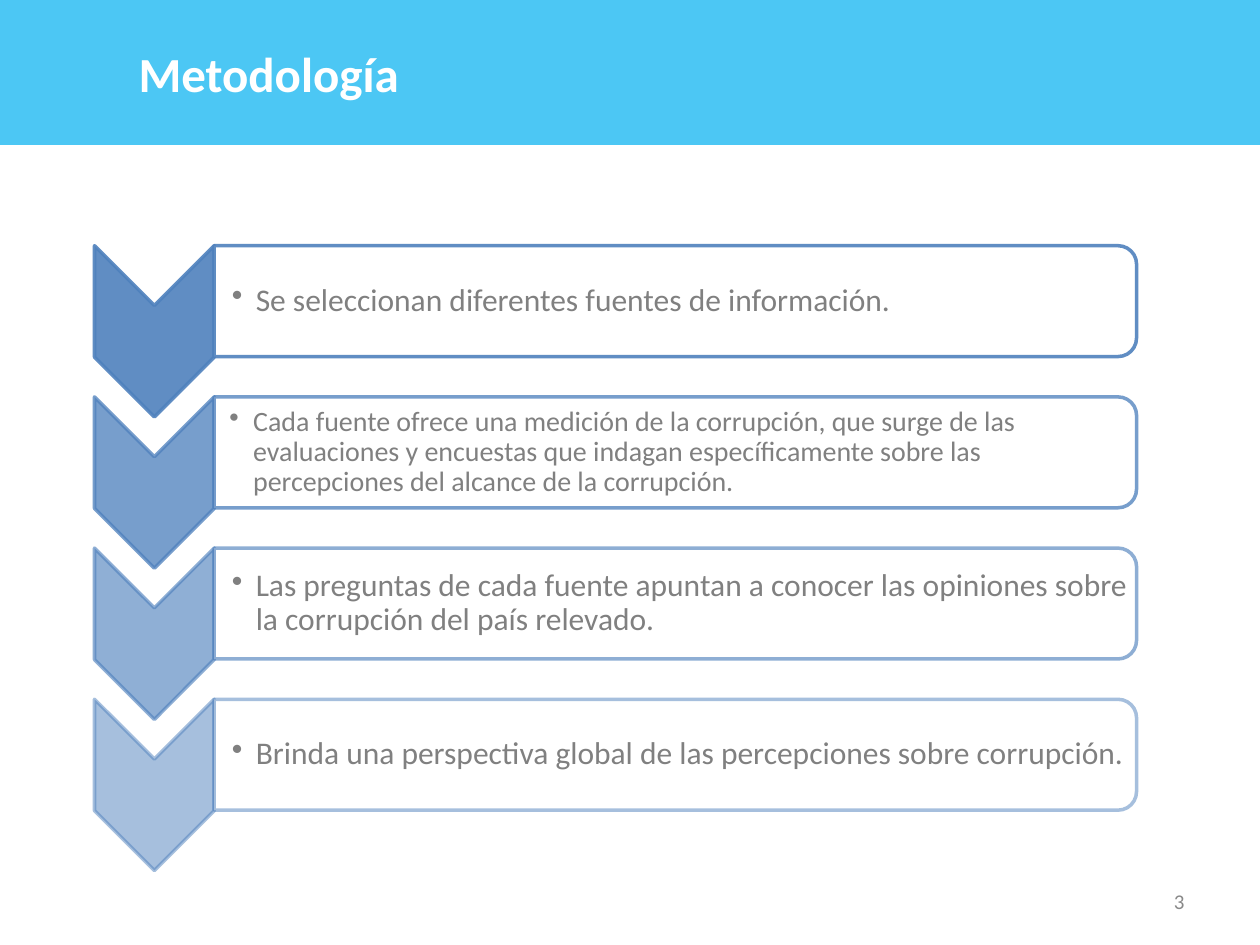
from lxml.etree import SubElement
from pptx import Presentation
from pptx.dml.color import RGBColor
from pptx.enum.shapes import MSO_SHAPE as Preset
from pptx.enum.text import MSO_ANCHOR as Anchor, PP_ALIGN as Align
from pptx.oxml.ns import qn
from pptx.util import Inches, Pt

COLORS = {"band": "00B0F0", "blue": "4F81BD", "white": "FFFFFF",
          "body": "808080", "number": "898989"}
FONT = "Calibri"
TITLE = "Metodología"
PAGE_NUMBER = "3"
STEPS = [
    ("Se seleccionan diferentes fuentes de información.", 18, 90),
    ("Cada fuente ofrece una medición de la corrupción, que surge de las "
     "evaluaciones y encuestas que indagan específicamente sobre las "
     "percepciones del alcance de la corrupción.", 16, 77),
    ("Las preguntas de cada fuente apuntan a conocer las opiniones sobre "
     "la corrupción del país relevado.", 18, 63),
    ("Brinda una perspectiva global de las percepciones sobre corrupción.", 18, 50),
]

WIDTH, HEIGHT = 10, 7.5
BAND_HEIGHT = 1.15
TOP, PITCH = 1.95, 1.2
ARROW_LEFT, ARROW_WIDTH, ARROW_HEIGHT = 0.75, 0.95, 1.36
CARD_LEFT, CARD_WIDTH, CARD_HEIGHT = 1.7, 7.32, 0.88
TEXT_WIDTH, TEXT_HEIGHT = 7.27, 0.8
INDENT = 0.19


def set_color(color_format, name, opacity=100):
    color_format.fore_color.rgb = RGBColor.from_string(COLORS[name])
    if opacity < 100:
        color = color_format._xPr.find(qn("a:solidFill"))[0]
        SubElement(color, qn("a:alpha"), val=str(opacity * 1000))


def add_block(page, preset, left, top, width, height, fill, opacity, line_opacity=None, turned=False):
    if turned:
        left, top = left + (width - height) / 2, top + (height - width) / 2
        width, height = height, width
    block = page.shapes.add_shape(preset, *map(Inches, (left, top, width, height)))
    block.shadow.inherit = False
    block.rotation = 90 if turned else 0
    block.fill.solid()
    set_color(block.fill, fill, opacity)
    if line_opacity is None:
        block.line.fill.background()
    else:
        block.line.width = Pt(2)
        block.line.fill.solid()
        set_color(block.line.fill, "blue", line_opacity)
    return block


def write(box, text, size, color, align=Align.LEFT, bold=False, insets=(0.1, 0.05, 0.1, 0.05)):
    frame = box.text_frame
    frame.word_wrap = True
    frame.vertical_anchor = Anchor.MIDDLE
    (frame.margin_left, frame.margin_top,
     frame.margin_right, frame.margin_bottom) = map(Inches, insets)
    para = frame.paragraphs[0]
    para.alignment = align
    span = para.add_run()
    span.text = text
    span.font.name, span.font.size, span.font.bold = FONT, Pt(size), bold
    span.font.color.rgb = RGBColor.from_string(COLORS[color])
    return para


def add_bullet(para):
    para.line_spacing = 0.9
    props = para._p.get_or_add_pPr()
    props.set("marL", str(Inches(INDENT)))
    props.set("indent", str(-Inches(INDENT)))
    SubElement(props, qn("a:buChar"), char="•")


def add_step(page, row, text, size, opacity):
    top = TOP + row * PITCH
    add_block(page, Preset.CHEVRON, ARROW_LEFT, top, ARROW_WIDTH, ARROW_HEIGHT,
              "blue", opacity, opacity, turned=True)
    add_block(page, Preset.ROUND_2_SAME_RECTANGLE, CARD_LEFT, top, CARD_WIDTH, CARD_HEIGHT,
              "white", 90, opacity, turned=True)
    box = page.shapes.add_textbox(
        Inches(CARD_LEFT), Inches(top + (CARD_HEIGHT - TEXT_HEIGHT) / 2),
        Inches(TEXT_WIDTH), Inches(TEXT_HEIGHT))
    inset = 0.14 if size == 18 else 0.12
    add_bullet(write(box, text, size, "body", insets=(inset, 0.01, 0.01, 0.01)))


def main():
    deck = Presentation()
    deck.slide_width, deck.slide_height = Inches(WIDTH), Inches(HEIGHT)
    page = deck.slides.add_slide(deck.slide_layouts[6])
    band = add_block(page, Preset.RECTANGLE, 0, 0, WIDTH, BAND_HEIGHT, "band", 70)
    write(band, TITLE, 28, "white", bold=True, insets=(1.1, 0.05, 0.1, 0.05))
    for row, step in enumerate(STEPS):
        add_step(page, row, *step)
    number = page.shapes.add_textbox(Inches(7.17), Inches(6.95), Inches(2.33), Inches(0.4))
    write(number, PAGE_NUMBER, 12, "number", Align.RIGHT)
    deck.save("out.pptx")


if __name__ == "__main__":
    main()
